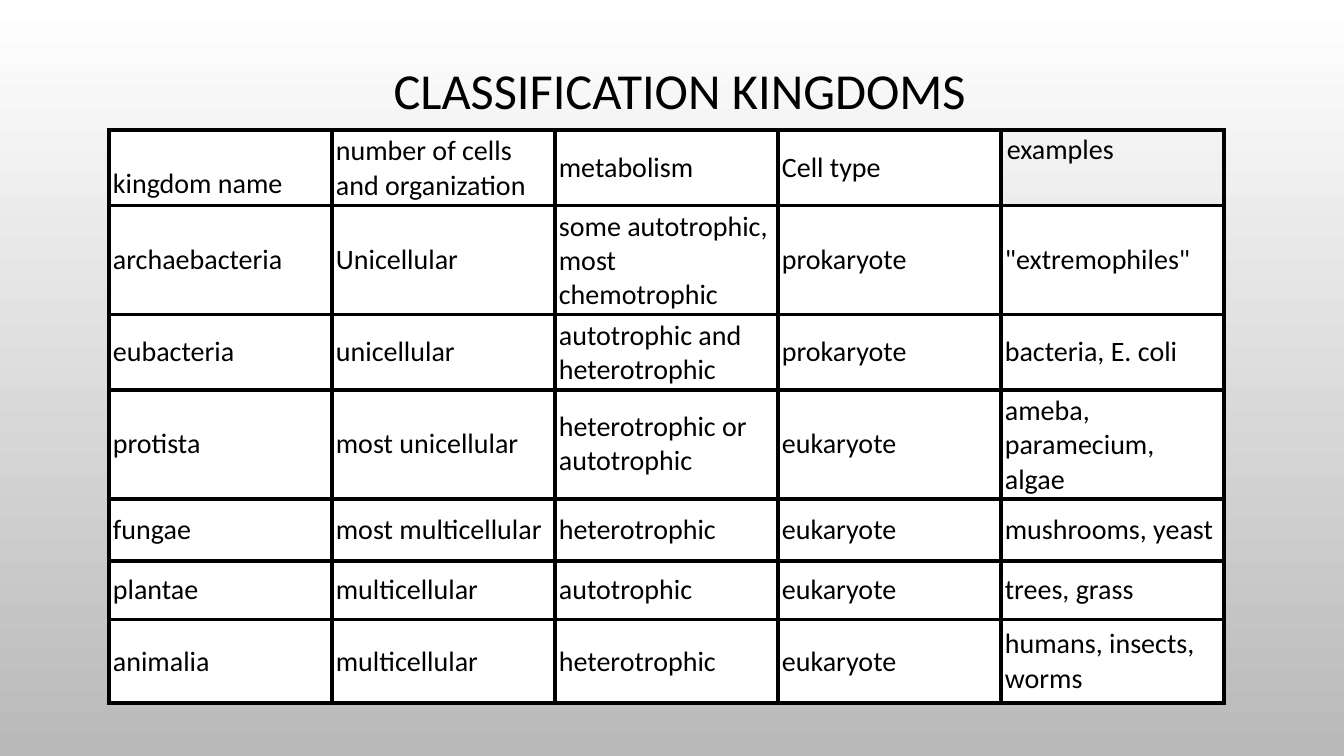
import pptx
import pptx.util
import pptx.dml.color
import pptx.enum.text
import pptx.oxml
import pptx.oxml.ns

Pt = pptx.util.Pt
RGB = pptx.dml.color.RGBColor
ALIGN = pptx.enum.text.PP_ALIGN
ANCHOR = pptx.enum.text.MSO_ANCHOR

# Content
TITLE = "CLASSIFICATION KINGDOMS"
ROWS = [
    ("kingdom name", "number of cells and organization", "metabolism",
     "Cell type", "examples"),
    ("archaebacteria", "Unicellular", "some autotrophic, most chemotrophic",
     "prokaryote", '"extremophiles"'),
    ("eubacteria", "unicellular", "autotrophic and heterotrophic",
     "prokaryote", "bacteria, E. coli"),
    ("protista", "most unicellular", "heterotrophic or autotrophic",
     "eukaryote", "ameba, paramecium, algae"),
    ("fungae", "most multicellular", "heterotrophic",
     "eukaryote", "mushrooms, yeast"),
    ("plantae", "multicellular", "autotrophic",
     "eukaryote", "trees, grass"),
    ("animalia", "multicellular", "heterotrophic",
     "eukaryote", "humans, insects, worms"),
]

# Look
FONT = "Calibri"
BLACK = RGB(0x00, 0x00, 0x00)
WHITE = RGB(0xFF, 0xFF, 0xFF)
GRAY = RGB(0xB9, 0xB9, 0xB9)
LEFT, TOP = 77.76, 92.88
COL = 159.3
HIGH = [50.4, 70, 50.4, 70, 44.6, 41.8, 59.8]
EDGE = 3


def style(para, size):
    for run in para.runs:
        run.font.name = FONT
        run.font.size = Pt(size)
        run.font.color.rgb = BLACK


def border(cell):
    props = cell._tc.get_or_add_tcPr()
    for spot, side in enumerate(("lnL", "lnR", "lnT", "lnB")):
        props.insert(spot, pptx.oxml.parse_xml(
            f'<a:{side} {pptx.oxml.ns.nsdecls("a")} w="{Pt(EDGE)}">'
            f'<a:solidFill><a:srgbClr val="{BLACK}"/></a:solidFill>'
            f'</a:{side}>'))


def inset(cell, side, end):
    cell.margin_left = cell.margin_right = Pt(side)
    cell.margin_top = cell.margin_bottom = Pt(end)


def main():
    deck = pptx.Presentation()
    deck.slide_width, deck.slide_height = Pt(960), Pt(540)
    slide = deck.slides.add_slide(deck.slide_layouts[6])

    # Background, white at the top to gray at the bottom
    back = slide.background.fill
    back.gradient()
    back.gradient_angle = 270
    for stop, color in zip(back.gradient_stops, (WHITE, GRAY)):
        stop.color.rgb = color

    # Title
    frame = slide.shapes.add_textbox(
        Pt(LEFT), Pt(3.6), Pt(815.76), Pt(126)).text_frame
    frame.word_wrap = True
    frame.vertical_anchor = ANCHOR.MIDDLE
    frame.text = TITLE
    head = frame.paragraphs[0]
    head.alignment = ALIGN.CENTER
    head.line_spacing = 0.9
    style(head, 36)

    # Table
    count = len(ROWS[0])
    table = slide.shapes.add_table(
        len(ROWS), count, Pt(LEFT), Pt(TOP),
        Pt(COL * count), Pt(sum(HIGH))).table
    table.first_row = table.horz_banding = False
    for col in table.columns:
        col.width = Pt(COL)
    for row, high, texts in zip(table.rows, HIGH, ROWS):
        row.height = Pt(high)
        for cell, text in zip(row.cells, texts):
            cell.text = text
            style(cell.text_frame.paragraphs[0], 20)
            cell.vertical_anchor = ANCHOR.MIDDLE
            inset(cell, 2.9, 2.9)
            cell.fill.solid()
            cell.fill.fore_color.rgb = WHITE
            border(cell)

    # Header corners
    table.cell(0, 0).vertical_anchor = ANCHOR.BOTTOM
    last = table.cell(0, count - 1)
    last.vertical_anchor = ANCHOR.TOP
    last.fill.background()
    inset(last, 4.3, 2.2)

    deck.save("out.pptx")


if __name__ == "__main__":
    main()
